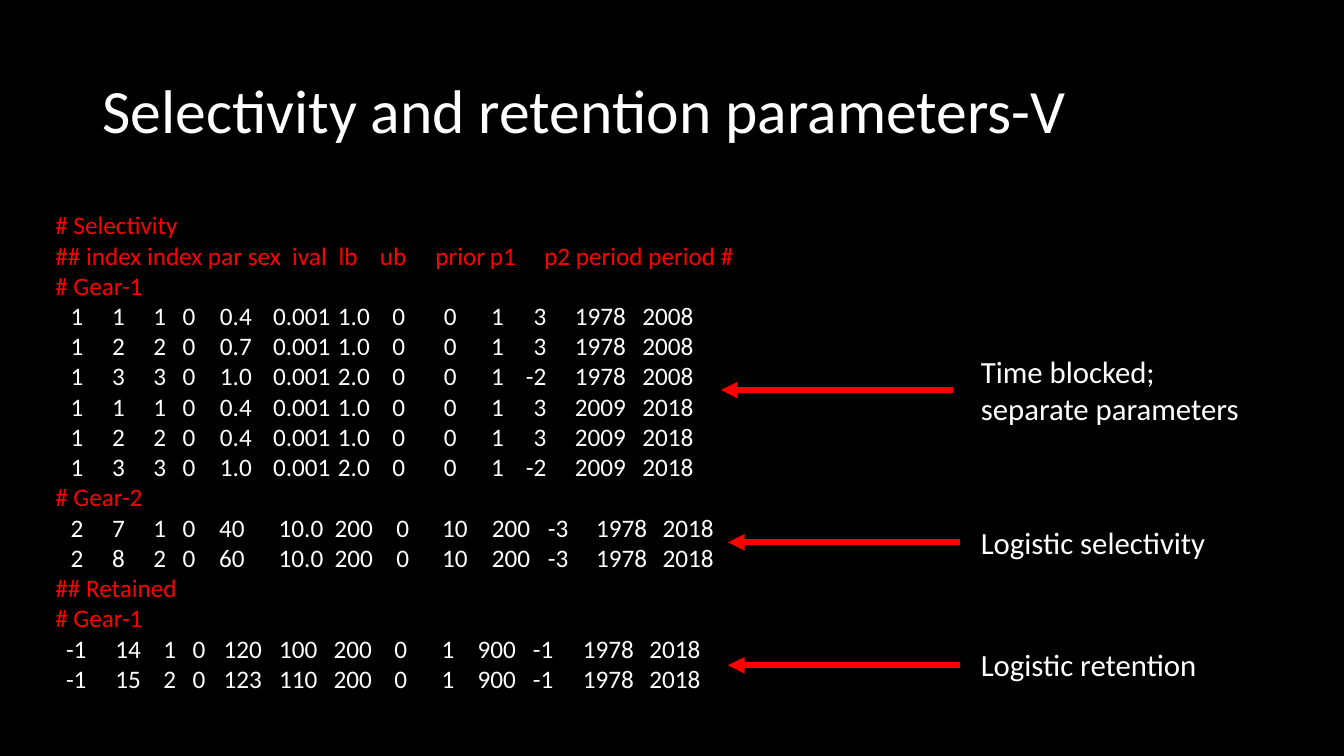
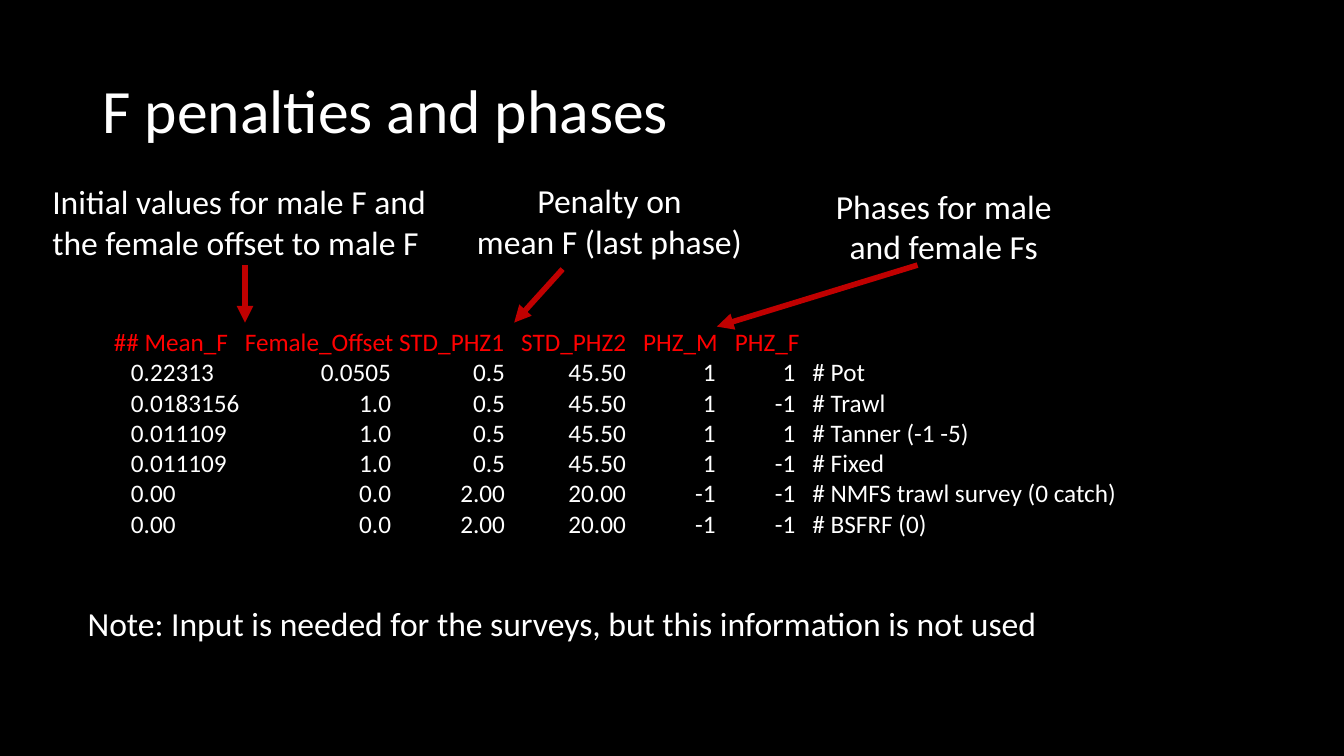
"""Build two slides on selectivity parameters and fishing mortality penalties."""
import lxml.etree
import pptx
import pptx.dml.color
import pptx.enum.shapes
import pptx.enum.text
import pptx.oxml.ns
import pptx.util

Inches = pptx.util.Inches
qn = pptx.oxml.ns.qn
colour = pptx.dml.color.RGBColor.from_string
ALIGN = pptx.enum.text.PP_ALIGN
FONT = "Calibri"
BLACK, WHITE, RED, DARK_RED = "000000", "FFFFFF", "FF0000", "C00000"


def add_text(page, place, lines, size, wrap=False, align=ALIGN.LEFT):
    """Add a text box; each line holds text, colour, tab stops and their alignments."""
    box = page.shapes.add_textbox(*[Inches(length) for length in place])
    frame = box.text_frame
    frame.word_wrap = wrap
    for number, (text, ink, stops, sides) in enumerate(lines):
        para = frame.paragraphs[0] if number == 0 else frame.add_paragraph()
        para.alignment = align
        if stops:
            tabs = lxml.etree.Element(qn("a:tabLst"))
            for stop, side in zip(stops, sides):
                lxml.etree.SubElement(tabs, qn("a:tab"), pos=str(Inches(stop)), algn=side)
            para._p.get_or_add_pPr().insert(0, tabs)
        para.add_run().text = text
        para.font.name = FONT
        para.font.size = pptx.util.Pt(size)
        para.font.color.rgb = colour(ink)
    return frame


def add_arrow(page, start, end, ink):
    """Add a thick arrow that points at its end."""
    arrow = page.shapes.add_connector(
        pptx.enum.shapes.MSO_CONNECTOR.STRAIGHT,
        *[Inches(length) for length in start + end])
    arrow.line.color.rgb = colour(ink)
    arrow.line.width = pptx.util.Pt(4)
    lxml.etree.SubElement(arrow.line._get_or_add_ln(), qn("a:tailEnd"), type="triangle")
    lxml.etree.SubElement(arrow._element.spPr, qn("a:effectLst"))


deck = pptx.Presentation()
deck.slide_width, deck.slide_height = Inches(13.33), Inches(7.5)
background = deck.slide_master.background.fill
background.solid()
background.fore_color.rgb = colour(BLACK)

pages = []
for title in ("Selectivity and retention parameters-V", "F penalties and phases"):
    page = deck.slides.add_slide(deck.slide_layouts[6])
    frame = add_text(page, (0.92, 0.4, 11.5, 1.45), [(title, WHITE, [], "")], 44, wrap=True)
    frame.vertical_anchor = pptx.enum.text.MSO_ANCHOR.MIDDLE
    frame.paragraphs[0].line_spacing = 0.9
    pages.append(page)
selectivity_page, penalty_page = pages

selectivity_groups = [
    (["# Selectivity",
      "## index index par sex|ival|lb|ub|prior|p1|p2 period period #",
      "# Gear-1"],
     [0.28, 0.69, 1.1, 1.39, 1.95, 2.73, 3.12, 3.47, 3.98, 4.45, 4.87, 5.66, 6.33],
     ["1 1 1 0 0.4 0.001 1.0 0 0 1 3 1978 2008",
      "1 2 2 0 0.7 0.001 1.0 0 0 1 3 1978 2008",
      "1 3 3 0 1.0 0.001 2.0 0 0 1 -2 1978 2008",
      "1 1 1 0 0.4 0.001 1.0 0 0 1 3 2009 2018",
      "1 2 2 0 0.4 0.001 1.0 0 0 1 3 2009 2018",
      "1 3 3 0 1.0 0.001 2.0 0 0 1 -2 2009 2018"]),
    (["# Gear-2"],
     [0.28, 0.69, 1.1, 1.39, 1.88, 2.66, 3.15, 3.51, 4.09, 4.71, 5.09, 5.87, 6.53],
     ["2 7 1 0 40 10.0 200 0 10 200 -3 1978 2018",
      "2 8 2 0 60 10.0 200 0 10 200 -3 1978 2018"]),
    (["## Retained", "# Gear-1"],
     [0.31, 0.85, 1.2, 1.49, 2.05, 2.6, 3.14, 3.49, 3.96, 4.57, 4.94, 5.74, 6.4],
     ["-1 14 1 0 120 100 200 0 1 900 -1 1978 2018",
      "-1 15 2 0 123 110 200 0 1 900 -1 1978 2018"]),
]
penalty_groups = [
    (["## Mean_F|Female_Offset STD_PHZ1|STD_PHZ2|PHZ_M|PHZ_F"],
     [0.17, 2.75, 3.88, 5.08, 5.97, 6.76, 6.93],
     ["0.22313 0.0505 0.5 45.50 1 1 # Pot",
      "0.0183156 1.0 0.5 45.50 1 -1 # Trawl",
      "0.011109 1.0 0.5 45.50 1 1 # Tanner (-1 -5)",
      "0.011109 1.0 0.5 45.50 1 -1 # Fixed",
      "0.00 0.0 2.00 20.00 -1 -1 # NMFS trawl survey (0 catch)",
      "0.00 0.0 2.00 20.00 -1 -1 # BSFRF (0)"]),
]
listings = [
    (selectivity_page, (0.45, 2.03, 7.4, 4.95), selectivity_groups,
     [2.35, 2.81, 3.22, 3.77, 4.31, 4.85], ["r"] * 13),
    (penalty_page, (1.03, 3.19, 10.58, 2.22), penalty_groups,
     [1.3, 4.04, 5.25, 6.16], ["l", "r", "r", "r", "r", "r", "l"]),
]
for page, place, groups, heading_stops, sides in listings:
    lines = []
    for headings, stops, rows in groups:
        for heading in headings:
            heading_tabs = heading_stops if "|" in heading else []
            lines.append((heading.replace("|", "\t"), RED, heading_tabs, ["l"] * len(heading_tabs)))
        for row in rows:
            cells = row.split(" ", len(stops) - 1)
            lines.append(("\t" + "\t".join(cells), WHITE, stops, sides))
    add_text(page, place, lines, 18, wrap=True)

labels = [
    (selectivity_page, (9.63, 3.45, 2.79, 0.84), ["Time blocked;", "separate parameters"], 22, ALIGN.LEFT),
    (selectivity_page, (9.63, 5.15, 2.46, 0.47), ["Logistic selectivity"], 22, ALIGN.LEFT),
    (selectivity_page, (9.63, 6.36, 2.37, 0.47), ["Logistic retention"], 22, ALIGN.LEFT),
    (penalty_page, (0.77, 5.93, 9.62, 0.5),
     ["Note: Input is needed for the surveys, but this information is not used"], 24, ALIGN.LEFT),
    (penalty_page, (0.42, 1.75, 4.02, 0.91),
     ["Initial values for male F and", "the female offset to male F"], 24, ALIGN.LEFT),
    (penalty_page, (4.62, 1.74, 2.85, 0.91), ["Penalty on", "mean F (last phase)"], 24, ALIGN.CENTER),
    (penalty_page, (8.14, 1.79, 2.44, 0.91), ["Phases for male", "and female Fs"], 24, ALIGN.CENTER),
]
for page, place, texts, size, align in labels:
    add_text(page, place, [(text, WHITE, [], "") for text in texts], size, align=align)

for left, top in ((7.15, 3.87), (7.22, 5.38), (7.22, 6.6)):
    add_arrow(selectivity_page, (left + 2.3, top), (left, top), RED)
for start, end in (((2.43, 2.63), (2.43, 3.2)), ((5.58, 2.67), (5.1, 3.2)), ((9.1, 2.63), (7.11, 3.24))):
    add_arrow(penalty_page, start, end, DARK_RED)

deck.save("out.pptx")
